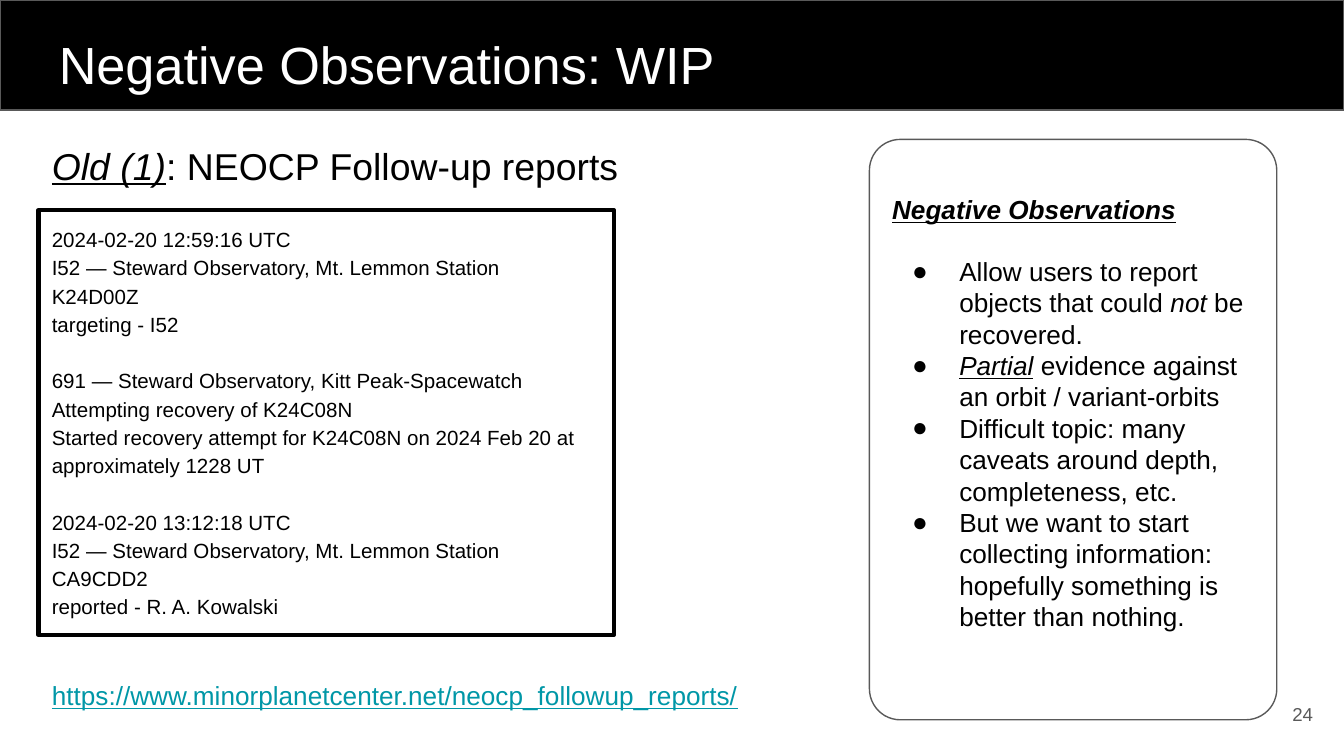
import lxml.etree
import pptx
import pptx.dml.color
import pptx.enum.shapes
import pptx.enum.text
import pptx.oxml.ns
import pptx.util

PX = 5715  # EMU per px, 160 px to the inch
ALIGN = pptx.enum.text.PP_ALIGN
ANCHOR = pptx.enum.text.MSO_ANCHOR
SHAPE = pptx.enum.shapes.MSO_SHAPE

BLACK, WHITE, GREY, TEAL = "000000", "FFFFFF", "595959", "0097A7"
ITALIC = {"italic": True}
MARKED = {"italic": True, "underline": True}
HEADING = {"bold": True, **MARKED}


def px(n):
    return pptx.util.Emu(n * PX)


def rgb(value):
    return pptx.dml.color.RGBColor.from_string(value)


def set_bullet(p, char=None, margin=0, hang=0, color=BLACK):
    """Give a paragraph a bullet and hanging indent, or none without char."""
    pPr = p._p.get_or_add_pPr()
    pPr.set("marL", str(px(margin)))
    pPr.set("indent", str(px(-hang)))

    def add(parent, tag, **attrs):
        return lxml.etree.SubElement(parent, pptx.oxml.ns.qn(tag), **attrs)

    if char:
        add(add(pPr, "a:buClr"), "a:srgbClr", val=color)
        add(pPr, "a:buFont", typeface="Arial")
        add(pPr, "a:buChar", char=char)
    else:
        add(pPr, "a:buNone")


def add_text(tf, text, size=14, color=BLACK, align=ALIGN.LEFT, spacing=1.0,
             before=0, bullet=None, **style):
    """Write one paragraph; text is a string or a list of (text, style) runs."""
    p = tf.paragraphs[0]
    if p.runs:
        p = tf.add_paragraph()
    if bullet:
        set_bullet(p, bullet, margin=80, hang=56)
    else:
        set_bullet(p)
    p.alignment = align
    p.line_spacing = spacing
    p.space_before = pptx.util.Pt(before)
    p.space_after = pptx.util.Pt(0)
    runs = [(text, {})] if isinstance(text, str) else text
    for words, extra in runs:
        r = p.add_run()
        r.text = words
        r.font.name = "Arial"
        r.font.size = pptx.util.Pt(size)
        r.font.color.rgb = rgb(color)
        for name, value in {**style, **extra}.items():
            setattr(r.font, name, value)


class Deck:
    """Holds the style and the current slide."""

    def __init__(self, width, height, inset=16):
        self.prs = pptx.Presentation()
        self.prs.slide_width, self.prs.slide_height = px(width), px(height)
        self.s = self.prs.slides.add_slide(self.prs.slide_layouts[1])
        self.inset = inset

    def frame(self, sp, anchor=ANCHOR.TOP):
        tf = sp.text_frame
        tf.word_wrap = True
        tf.auto_size = pptx.enum.text.MSO_AUTO_SIZE.NONE
        tf.vertical_anchor = anchor
        tf.margin_left = tf.margin_right = px(self.inset)
        tf.margin_top = tf.margin_bottom = px(self.inset)
        return tf

    def placeholder(self, idx, *box):
        sp = self.s.placeholders[idx]
        sp.left, sp.top, sp.width, sp.height = map(px, box)
        return self.frame(sp)

    def textbox(self, *box, anchor=ANCHOR.TOP):
        return self.frame(self.s.shapes.add_textbox(*map(px, box)), anchor)

    def panel(self, *box, kind=SHAPE.RECTANGLE, fill=None, line=GREY, weight=0.75):
        """Add an outlined shape behind the placeholders."""
        sp = self.s.shapes.add_shape(kind, *map(px, box))
        sp.shadow.inherit = False
        if fill:
            sp.fill.solid()
            sp.fill.fore_color.rgb = rgb(fill)
        else:
            sp.fill.background()
        sp.line.color.rgb = rgb(line)
        sp.line.width = pptx.util.Pt(weight)
        self.s.shapes._spTree.insert(2, sp._element)
        return sp


REPORTS = [
    ["2024-02-20 12:59:16 UTC",
     "I52 — Steward Observatory, Mt. Lemmon Station",
     "K24D00Z",
     "targeting - I52"],
    ["691 — Steward Observatory, Kitt Peak-Spacewatch",
     "Attempting recovery of K24C08N",
     "Started recovery attempt for K24C08N on 2024 Feb 20 at approximately 1228 UT"],
    ["2024-02-20 13:12:18 UTC",
     "I52 — Steward Observatory, Mt. Lemmon Station",
     "CA9CDD2",
     "reported - R. A. Kowalski"],
]

POINTS = [
    [("Allow users to report objects that could ", {}), ("not", ITALIC),
     (" be recovered.", {})],
    [("Partial", MARKED), (" evidence against an orbit / variant-orbits", {})],
    "Difficult topic: many caveats around depth, completeness, etc.",
    "But we want to start collecting information: "
    "hopefully something is better than nothing.",
]


def main():
    deck = Deck(1600, 900)

    deck.panel(0, 0, 1600, 131, fill=BLACK)
    title = deck.placeholder(0, 54, 11, 954, 101)
    add_text(title, "Negative Observations: WIP", size=28, color=WHITE, spacing=1.15)

    card = deck.panel(1035, 166, 485, 691, kind=SHAPE.ROUNDED_RECTANGLE)
    card.adjustments[0] = 0.076
    notes = deck.placeholder(1, 1046, 214, 464, 608)
    add_text(notes, "Negative Observations", **HEADING)
    for i, point in enumerate(POINTS):
        add_text(notes, point, bullet="●", before=0 if i else 16.5)

    log = deck.frame(deck.panel(46, 250, 685, 506, line=BLACK, weight=2.25))
    for n, report in enumerate(REPORTS):
        for i, line in enumerate(report):
            add_text(log, line, size=11, spacing=1.15, before=15 if n and not i else 0)

    subtitle = deck.textbox(46, 146, 934, 86)
    add_text(subtitle, [("Old (1)", MARKED), (": NEOCP Follow-up reports", {})],
             size=20, spacing=1.15)

    address = deck.textbox(46, 787, 934, 70)
    add_text(address, "https://www.minorplanetcenter.net/neocp_followup_reports/",
             color=TEAL, spacing=1.15, underline=True)

    number = deck.textbox(1483, 816, 96, 69, anchor=ANCHOR.MIDDLE)
    add_text(number, "24", size=10, color=GREY, align=ALIGN.RIGHT)

    deck.prs.save("out.pptx")


if __name__ == "__main__":
    main()
